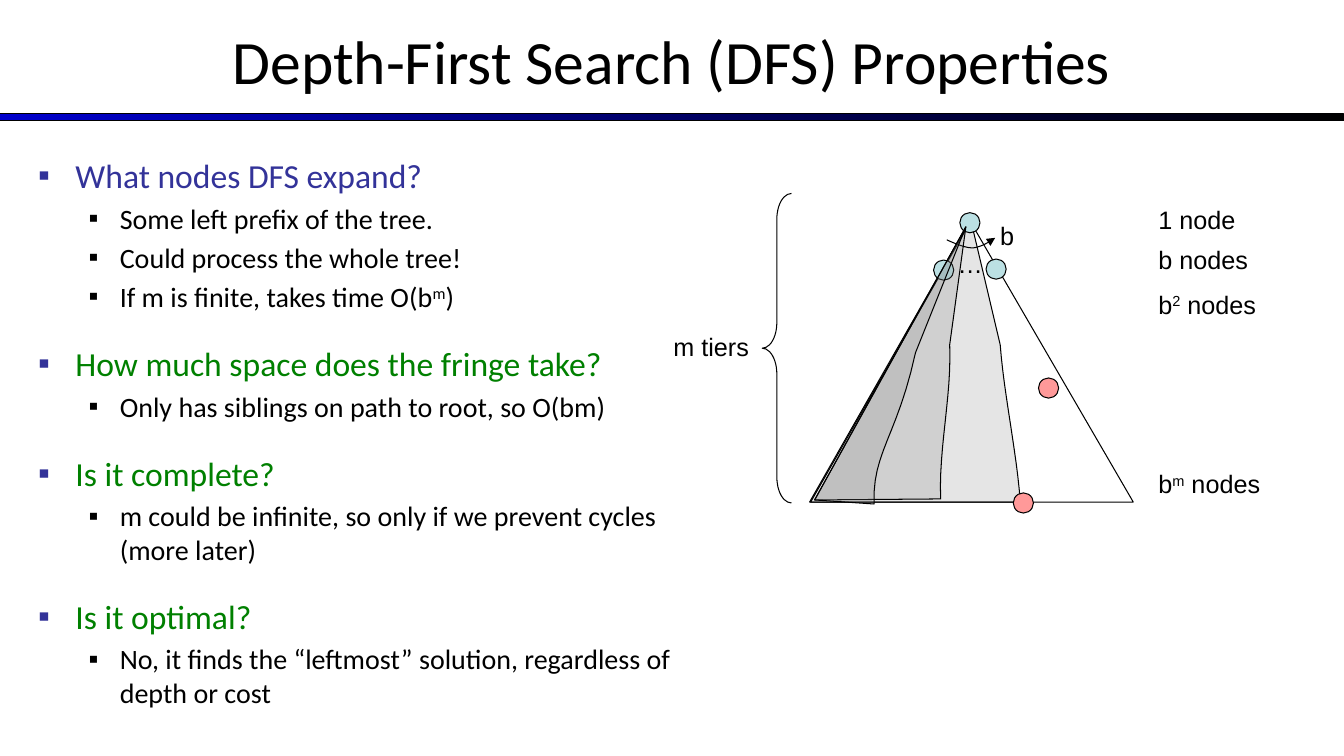
import dataclasses

import pptx
import pptx.dml.color
import pptx.enum.shapes
import pptx.enum.text
import pptx.oxml
import pptx.oxml.ns
import pptx.util
from lxml import etree

Inches = pptx.util.Inches
Pt = pptx.util.Pt
Shapes = pptx.enum.shapes.MSO_SHAPE
Align = pptx.enum.text.PP_ALIGN
Anchor = pptx.enum.text.MSO_ANCHOR
qn = pptx.oxml.ns.qn


@dataclasses.dataclass(frozen=True)
class Theme:
    ink: str = "000000"
    rule: str = "0000CC"
    bullet: str = "333399"
    question: str = "008000"
    node: str = "BBE0E3"
    goal: str = "FF9999"
    explored: str = "808080"
    explored_alpha: int = 20
    text_font: str = "Calibri"
    label_font: str = "Arial"
    title_size: int = 44
    question_size: int = 24
    answer_size: int = 20
    label_size: int = 18
    outline: float = 0.75


THEME = Theme()

# Heading, its colour, and its answers; ^ encloses a superscript
QUESTIONS = [
    ("What nodes DFS expand?", THEME.bullet,
     ["Some left prefix of the tree.", "Could process the whole tree!",
      "If m is finite, takes time O(b^m^)"]),
    ("How much space does the fringe take?", THEME.question,
     ["Only has siblings on path to root, so O(bm)"]),
    ("Is it complete?", THEME.question,
     ["m could be infinite, so only if we prevent cycles (more later)"]),
    ("Is it optimal?", THEME.question,
     ["No, it finds the “leftmost” solution, regardless of depth or cost"]),
]


def rgb(color):
    return pptx.dml.color.RGBColor.from_string(color)


def style(shape, fill=None, alpha=None):
    """Thin black outline, with a plain fill or none."""
    shape.shadow.inherit = False
    shape.line.color.rgb = rgb(THEME.ink)
    shape.line.width = Pt(THEME.outline)
    if fill is None:
        shape.fill.background()
        return
    shape.fill.solid()
    shape.fill.fore_color.rgb = rgb(fill)
    if alpha is not None:
        color = shape.fill._xPr.find(".//" + qn("a:srgbClr"))
        etree.SubElement(color, qn("a:alpha")).set("val", str(alpha * 1000))


def add_runs(paragraph, text, size, font, color):
    for index, part in enumerate(text.split("^")):
        if not part:
            continue
        run = paragraph.add_run()
        run.text = part
        run.font.size = Pt(size)
        run.font.name = font
        run.font.color.rgb = rgb(color)
        if index % 2:
            run._r.get_or_add_rPr().set("baseline", "30000")


def add_frame(slide, left, top, width, height):
    frame = slide.shapes.add_textbox(
        Inches(left), Inches(top), Inches(width), Inches(height)).text_frame
    frame.word_wrap = True
    return frame


def add_bullet(paragraph, color, margin, hanging):
    props = paragraph._p.get_or_add_pPr()
    props.set("marL", str(Inches(margin)))
    props.set("indent", str(-Inches(hanging)))
    bullet_color = etree.SubElement(props, qn("a:buClr"))
    etree.SubElement(bullet_color, qn("a:srgbClr")).set("val", color)
    etree.SubElement(props, qn("a:buFont")).set("typeface", THEME.label_font)
    etree.SubElement(props, qn("a:buChar")).set("char", "▪")


def curve_points(start, curve, steps=12):
    """Points along a cubic curve (x1, y1, x2, y2, x3, y3)."""
    xs, ys = (start[0], *curve[::2]), (start[1], *curve[1::2])
    for step in range(1, steps + 1):
        t = step / steps
        weights = ((1 - t) ** 3, 3 * t * (1 - t) ** 2, 3 * t * t * (1 - t), t ** 3)
        yield tuple(sum(w * c for w, c in zip(weights, axis)) for axis in (xs, ys))


def add_outline(slide, left, top, segments, close=True):
    """Draw pairs as corners and sixes as curves, offset from left, top."""
    points = []
    for segment in segments:
        points += [segment] if len(segment) == 2 else curve_points(points[-1], segment)
    places = [(Inches(left + x), Inches(top + y)) for x, y in points]
    builder = slide.shapes.build_freeform(*places[0])
    builder.add_line_segments(places[1:], close=close)
    return builder.convert_to_shape()


def add_header(slide, left, top, width, height):
    frame = add_frame(slide, left, top, width, height)
    frame.vertical_anchor = Anchor.MIDDLE
    title = frame.paragraphs[0]
    title.alignment = Align.CENTER
    add_runs(title, "Depth-First Search (DFS) Properties",
             THEME.title_size, THEME.text_font, THEME.ink)

    # Gradient rule under the title
    rule = slide.shapes.add_shape(Shapes.RECTANGLE, Inches(left), Inches(top + 1.16),
                                  Inches(width), Inches(0.07))
    style(rule)
    rule.fill.gradient()
    rule.fill.gradient_angle = 0
    for stop, color in zip(rule.fill.gradient_stops, (THEME.rule, THEME.ink)):
        stop.color.rgb = rgb(color)


def add_questions(slide, left, top, width, height):
    frame = add_frame(slide, left, top, width, height)
    for number, (question, color, answers) in enumerate(QUESTIONS):
        heading = frame.add_paragraph() if number else frame.paragraphs[0]
        heading.space_before = Pt(21.5 if number else 4)
        add_bullet(heading, THEME.bullet, 0.37, 0.37)
        add_runs(heading, question, THEME.question_size, THEME.text_font, color)
        for answer in answers:
            item = frame.add_paragraph()
            item.level = 1
            item.space_before = Pt(4)
            add_bullet(item, THEME.ink, 0.81, 0.31)
            add_runs(item, answer, THEME.answer_size, THEME.text_font, THEME.ink)


def add_search_tree(slide, left, top):
    def explored(*segments):
        region = add_outline(slide, left, top, segments)
        style(region, THEME.explored, THEME.explored_alpha)

    def node(x, y, color):
        circle = slide.shapes.add_shape(Shapes.OVAL, Inches(left + x), Inches(top + y),
                                        Inches(0.2), Inches(0.2))
        style(circle, color)

    def label(text, x, y, width):
        frame = add_frame(slide, left + x, top + y, width, 0.4)
        add_runs(frame.paragraphs[0], text, THEME.label_size, THEME.label_font, THEME.ink)

    # Widest explored region, then the whole tree
    explored((1.54, 3.08), (3.62, 3.08), (3.58, 2.56, 3.46, 2.03, 3.42, 1.52), (3.13, 0.29))
    style(add_outline(slide, left, top, [(1.53, 3.08), (4.74, 3.08), (3.12, 0.29)]))

    # Root and its children
    for x, y in ((3.02, 0.21), (2.76, 0.68), (3.28, 0.67)):
        node(x, y, THEME.node)
    label("…", 2.9, 0.51, 0.3)

    # Branching factor
    branching = add_outline(slide, left, top, [
        (2.89, 0.48), (2.98, 0.52, 3.07, 0.56, 3.15, 0.56),
        (3.23, 0.55, 3.3, 0.51, 3.37, 0.46)], close=False)
    style(branching)
    etree.SubElement(branching.line._get_or_add_ln(), qn("a:tailEnd")).set("type", "triangle")
    label("b", 3.32, 0.24, 0.33)

    # Nodes in each tier
    for text, y in (("1 node", 0.08), ("b nodes", 0.47), ("b^2^ nodes", 0.92),
                    ("b^m^ nodes", 2.7)):
        label(text, 4.89, y, 1.5)

    # Depth brace
    brace = slide.shapes.add_shape(Shapes.LEFT_BRACE, Inches(left + 1.06), Inches(top + 0.02),
                                   Inches(0.29), Inches(3.07))
    style(brace)
    brace.adjustments[0] = 0.88
    label("m tiers", 0.08, 1.34, 1.38)

    # Goal on the bottom tier, narrower explored regions, shallower goal
    node(3.55, 2.99, THEME.goal)
    explored((1.58, 3.06), (2.83, 3.05), (2.81, 2.54, 2.94, 2.03, 2.92, 1.52), (3.08, 0.35))
    explored((1.58, 3.06), (2.17, 3.1), (2.15, 2.59, 2.4, 2.43, 2.58, 1.6), (3.08, 0.35))
    node(3.8, 1.85, THEME.goal)


def main():
    deck = pptx.Presentation()
    deck.slide_width, deck.slide_height = Inches(13.33), Inches(7.5)
    slide = deck.slides.add_slide(deck.slide_layouts[6])
    add_header(slide, 0, -0.03, 13.33, 1.25)
    add_questions(slide, 0.28, 1.49, 6.52, 5.17)
    add_search_tree(slide, 6.5, 1.9)
    deck.save("out.pptx")


if __name__ == "__main__":
    main()
